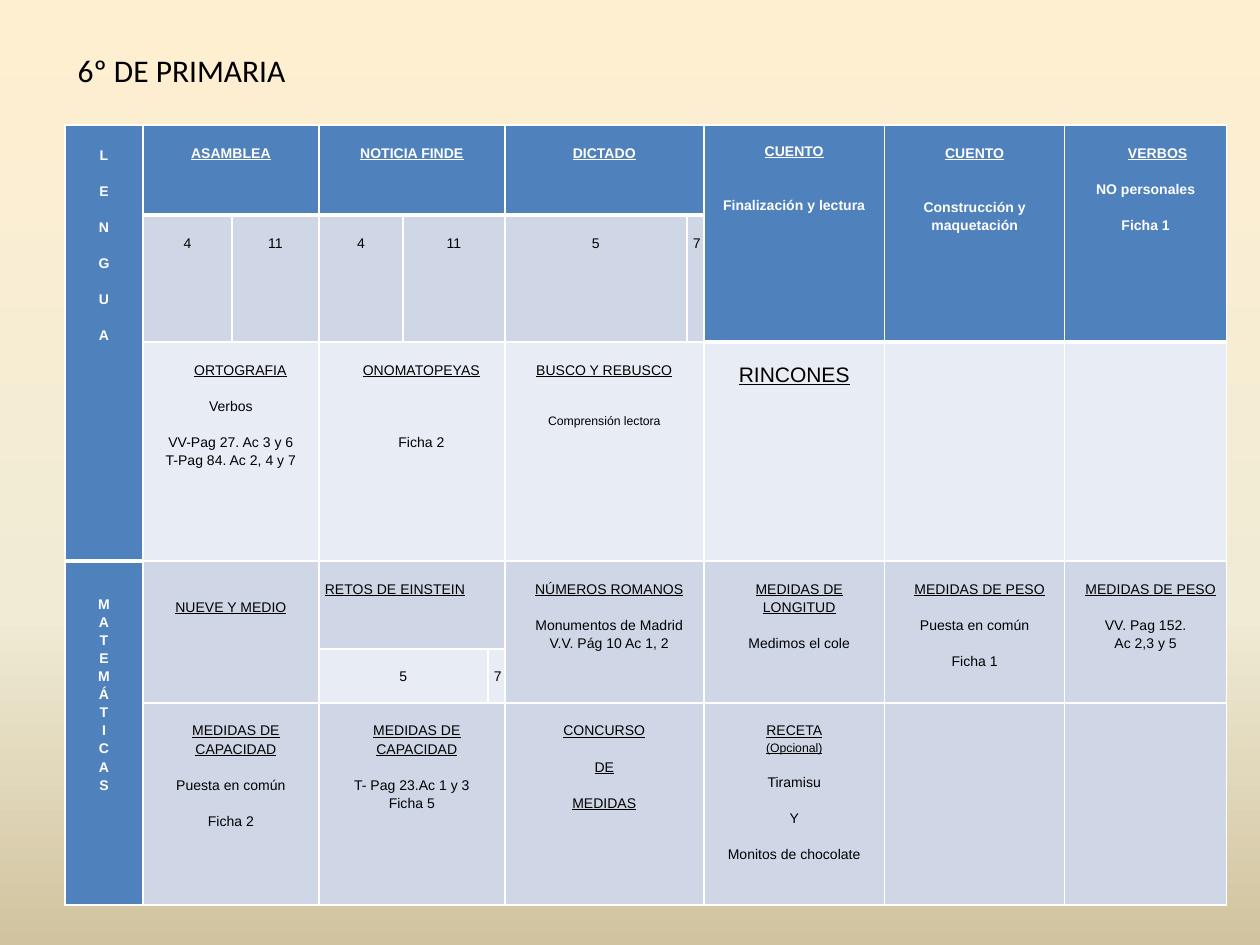
from copy import deepcopy

from lxml import etree
from pptx import Presentation
from pptx import util as u
from pptx.dml.color import RGBColor
from pptx.enum import text
from pptx.oxml import ns

PX = 914400 // 126
HEAD, BAND, PALE, WHITE, BLACK = "4F81BD", "CFD7E7", "E8ECF4", "FFFFFF", "000000"
COLS = [78, 89, 87, 84, 85, 17, 182, 17, 181, 180, 162]
ROWS = [90, 127, 219, 88, 54, 202]
LINE = 18  # height of one line of 8 pt text


def px(n):
    return u.Emu(n * PX)


def rgb(hex_):
    return RGBColor.from_string(hex_)


def line(txt, gap=0, left=0, first=0, size=8, under=False, align="CENTER"):
    """Describe a paragraph; gap is the space above it in px."""
    return dict(txt=txt, gap=gap, left=left, first=first, size=size,
                under=under, align=align)


def title(txt, **fmt):
    return line(txt, under=True, **fmt)


def spaced(*words, make=line):
    """Lines set one empty line apart, the first without a gap."""
    return [make(w, gap=LINE if i else 0) for i, w in enumerate(words)]


def after(*words):
    """Lines that each follow one empty line."""
    return [line(w, gap=LINE) for w in words]


# row, column, rows spanned, columns spanned, fill, space on top, lines
CELLS = [
    (0, 0, 3, 1, HEAD, 20, spaced(*"LENGUA")),
    (0, 1, 1, 2, HEAD, LINE, [title("ASAMBLEA")]),
    (0, 3, 1, 3, HEAD, LINE, [title("NOTICIA FINDE")]),
    (0, 6, 1, 2, HEAD, LINE, [title("DICTADO")]),
    (0, 8, 2, 1, HEAD, 16,
     [title("CUENTO"), line("Finalización y lectura", gap=2 * LINE)]),
    (0, 9, 2, 1, HEAD, LINE,
     [title("CUENTO"), line("Construcción y maquetación", gap=2 * LINE)]),
    (0, 10, 2, 1, HEAD, LINE,
     [title("VERBOS", left=39, first=-15), *after("NO personales", "Ficha 1")]),
    *[(1, col, 1, span, BAND, LINE, [line(day)]) for col, span, day in
      [(1, 1, "4"), (2, 1, "11"), (3, 1, "4"), (4, 2, "11"), (6, 1, "5"), (7, 1, "7")]],
    (2, 1, 1, 2, PALE, LINE,
     [title("ORTOGRAFIA", left=19), *after("Verbos", "VV-Pag 27. Ac 3 y 6"),
      line("T-Pag 84. Ac 2, 4 y 7")]),
    (2, 3, 1, 3, PALE, LINE,
     [title("ONOMATOPEYAS", left=19), line("Ficha 2", gap=3 * LINE, left=19)]),
    (2, 6, 1, 2, PALE, LINE,
     [title("BUSCO Y REBUSCO"), line("Comprensión lectora", gap=34, size=7)]),
    (2, 8, 1, 1, PALE, LINE, [title("RINCONES", size=12)]),
    (2, 9, 1, 1, PALE, 0, []),
    (2, 10, 1, 1, PALE, 0, []),
    (3, 0, 3, 1, HEAD, 33, [line(c) for c in "MATEMÁTICAS"]),
    (3, 1, 2, 2, BAND, 2 * LINE, [title("NUEVE Y MEDIO")]),
    (3, 3, 1, 3, BAND, LINE, [title("RETOS DE EINSTEIN", align="LEFT")]),
    (3, 6, 2, 2, BAND, LINE,
     [title("NÚMEROS ROMANOS", left=10),
      line("Monumentos de Madrid", gap=LINE, left=10),
      line("V.V. Pág 10 Ac 1, 2", left=10)]),
    (3, 8, 2, 1, BAND, LINE,
     [title("MEDIDAS DE LONGITUD", left=10),
      line("Medimos el cole", gap=LINE, left=10)]),
    (3, 9, 2, 1, BAND, LINE,
     [title("MEDIDAS DE PESO", left=10), *after("Puesta en común", "Ficha 1")]),
    (3, 10, 2, 1, BAND, LINE,
     [title("MEDIDAS DE PESO", left=10), *after("VV. Pag 152."), line("Ac 2,3 y 5")]),
    (4, 3, 1, 2, PALE, LINE, [line("5")]),
    (4, 5, 1, 1, PALE, LINE, [line("7")]),
    (5, 1, 1, 2, BAND, LINE,
     [title("MEDIDAS DE CAPACIDAD", left=10), *after("Puesta en común", "Ficha 2")]),
    (5, 3, 1, 3, BAND, LINE,
     [title("MEDIDAS DE CAPACIDAD", left=10), *after("T- Pag 23.Ac 1 y 3"),
      line("Ficha 5")]),
    (5, 6, 1, 2, BAND, LINE, spaced("CONCURSO", "DE", "MEDIDAS", make=title)),
    (5, 8, 1, 1, BAND, LINE,
     [title("RECETA"), title("(Opcional)", size=7),
      *after("Tiramisu", "Y", "Monitos de chocolate")]),
    (5, 9, 1, 1, BAND, 0, []),
    (5, 10, 1, 1, BAND, 0, []),
]


def set_background(slide, stops):
    fill = slide.background.fill
    fill.gradient()
    fill.gradient_angle = 270
    gs_lst = next(slide.element.iter(ns.qn("a:gsLst")))
    for _ in range(len(stops) - len(gs_lst)):
        gs_lst.append(deepcopy(gs_lst[-1]))
    for stop, (pos, color) in zip(fill.gradient_stops, stops):
        stop.position = pos
        stop.color.rgb = rgb(color)


def set_borders(cell, top, bottom):
    tc_pr = cell._tc.get_or_add_tcPr()
    for i, (side, width) in enumerate(dict(L=1, R=1, T=top, B=bottom).items()):
        ln = etree.Element(ns.qn(f"a:ln{side}"), w=str(u.Pt(width)))
        fill = etree.SubElement(ln, ns.qn("a:solidFill"))
        etree.SubElement(fill, ns.qn("a:srgbClr"), val=WHITE)
        tc_pr.insert(i, ln)


def write_lines(tf, lines, bold, color):
    for i, ln in enumerate(lines):
        p = tf.add_paragraph() if i else tf.paragraphs[0]
        p.alignment = getattr(text.PP_ALIGN, ln["align"])
        p.line_spacing = 1.15
        p.space_before = u.Pt(round(px(ln["gap"]).pt, 1))
        p_pr = p._p.get_or_add_pPr()
        p_pr.set("marL", str(px(ln["left"])))
        p_pr.set("indent", str(px(ln["first"])))
        r = p.add_run()
        r.text = ln["txt"]
        fmt = dict(name="Arial", size=u.Pt(ln["size"]), bold=bold, underline=ln["under"])
        for key, val in fmt.items():
            setattr(r.font, key, val)
        r.font.color.rgb = rgb(color)


def add_timetable(slide, x, y):
    frame = slide.shapes.add_table(len(ROWS), len(COLS), px(x), px(y),
                                   px(sum(COLS)), px(sum(ROWS)))
    table = frame.table
    table.first_row = table.horz_banding = False
    for col, w in zip(table.columns, COLS):
        col.width = px(w)
    for row, h in zip(table.rows, ROWS):
        row.height = px(h)

    edge_above = [1] * len(COLS)
    for row, col, n_rows, n_cols, fill, pad, lines in CELLS:
        head = fill == HEAD
        bottom = 3 if head and row + n_rows < len(ROWS) else 1
        cell = table.cell(row, col)
        if n_rows * n_cols > 1:
            cell.merge(table.cell(row + n_rows - 1, col + n_cols - 1))
        for c in range(col, col + n_cols):
            for r in range(row, row + n_rows):
                part = table.cell(r, c)
                part.fill.solid()
                part.fill.fore_color.rgb = rgb(fill)
                set_borders(part, edge_above[c], bottom)
            edge_above[c] = bottom
        margins = dict(margin_left=px(6), margin_right=px(6),
                       margin_top=px(pad), margin_bottom=0)
        for key, val in margins.items():
            setattr(cell, key, val)
        write_lines(cell.text_frame, lines, head, WHITE if head else BLACK)


def add_title(slide, x, y, w, h):
    sp = slide.shapes.title
    box = dict(left=x, top=y, width=w, height=h)
    for key, val in box.items():
        setattr(sp, key, px(val))
    tf = sp.text_frame
    tf.word_wrap = False
    tf.vertical_anchor = text.MSO_ANCHOR.TOP
    p = tf.paragraphs[0]
    p.alignment = text.PP_ALIGN.LEFT
    r = p.add_run()
    r.text = "6º DE PRIMARIA"
    r.font.name, r.font.size = "Calibri", u.Pt(18)
    r.font.color.rgb = rgb(BLACK)


def main():
    prs = Presentation()
    prs.slide_width, prs.slide_height = px(1260), px(945)
    slide = prs.slides.add_slide(prs.slide_layouts[5])
    set_background(slide, [(0, "FFEFD1"), (0.65, "F0EBD5"), (1, "D1C39F")])
    add_timetable(slide, 65, 125)
    add_title(slide, 65, 45, 248, 50)
    prs.save("out.pptx")


if __name__ == "__main__":
    main()
